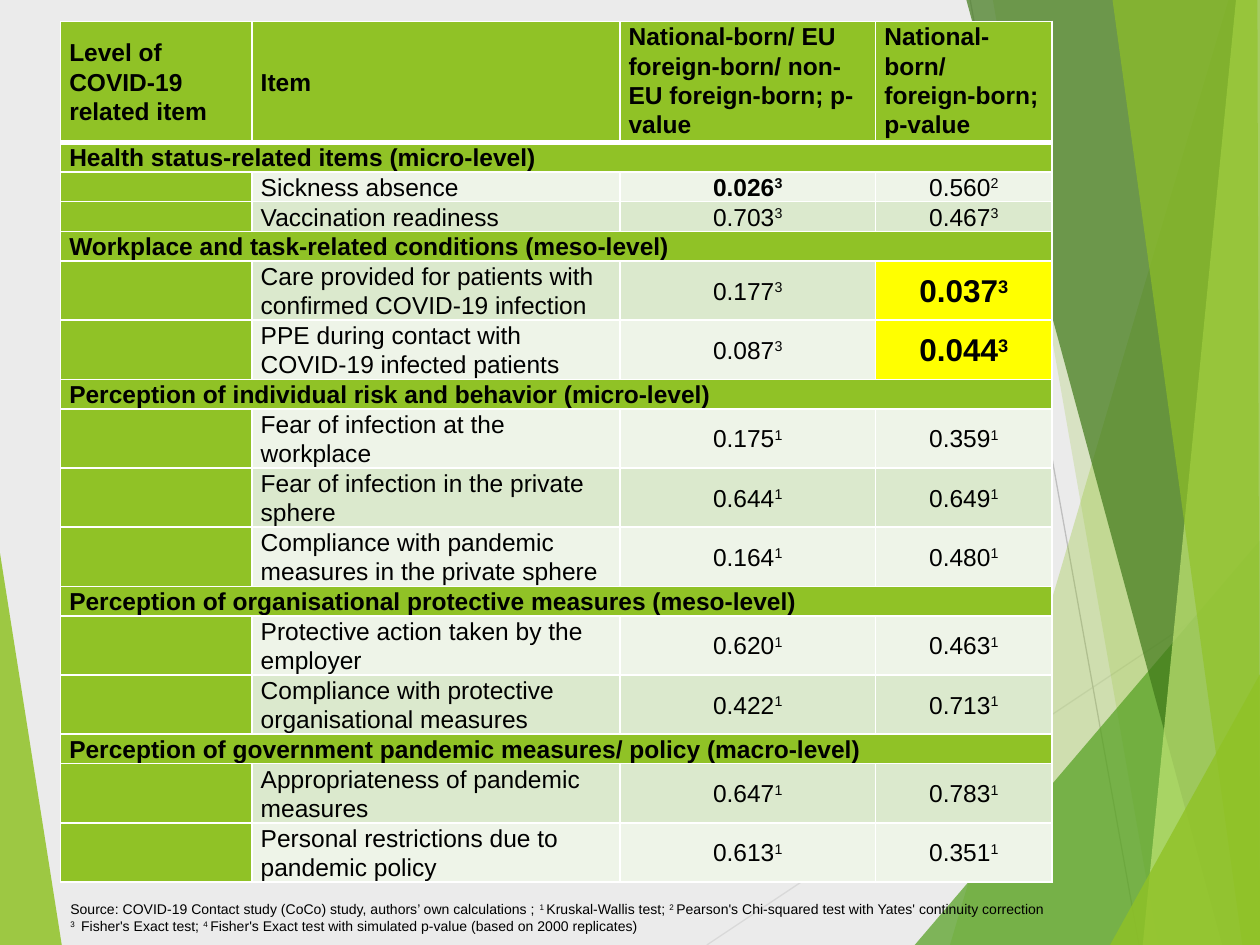
from lxml import etree
from pptx import Presentation
from pptx.dml.color import RGBColor
from pptx.enum.shapes import MSO_CONNECTOR
from pptx.enum.text import MSO_ANCHOR, PP_ALIGN
from pptx.oxml.ns import qn
from pptx.util import Inches, Pt

STRAIGHT = MSO_CONNECTOR.STRAIGHT
TOP, MIDDLE = MSO_ANCHOR.TOP, MSO_ANCHOR.MIDDLE
LEFT, CENTER, JUSTIFY = PP_ALIGN.LEFT, PP_ALIGN.CENTER, PP_ALIGN.JUSTIFY

FONT = "Arial"
GREEN, YELLOW, WHITE, BLACK = "90C226", "FFFF00", "FFFFFF", "000000"
BANDS = ("EEF4E8", "DBE9CD")
COL_WIDTHS = (1.52, 2.92, 2.03, 1.4)
HEADER_H, LINE_H, ITEM_H = 0.96, 0.23, 0.47

# Background facets: points, colour, opacity in percent
LEFT_FACET = ([(0, 4.39), (0.49, 7.5), (0, 7.5)], GREEN, 85)
RIGHT_FACETS = [
    ([(9.75, 0), (7.54, 7.5), (10, 7.5), (10, 0)], GREEN, 30),
    ([(7.88, 0), (9.19, 7.5), (10, 7.5), (10, 0)], GREEN, 20),
    ([(7.26, 7.5), (10, 4.29), (10, 7.5)], "54A021", 72),
    ([(7.67, 0), (9.7, 7.5), (10, 7.5), (10, 0)], "3F7819", 70),
    ([(9.81, 0), (9.07, 7.5), (10, 7.5), (10, 0)], "C0E474", 70),
    ([(8.83, 0), (9.86, 7.5), (10, 7.5), (9.98, 0)], GREEN, 65),
    ([(8.81, 7.5), (10, 5.35), (10, 7.5)], GREEN, 80),
]
RAYS = [((5.61, 7.5), (10, 4.57), "D9D9D9"), ((7.7, 0), (9.04, 7.5), "BFBFBF")]

# Text between ^ marks is superscript; * marks a bold value, ! a highlighted one
HEADERS = [
    ("Level of COVID-19 related item", MIDDLE),
    ("Item", MIDDLE),
    ("National-born/ EU foreign-born/ non-EU foreign-born; p-value", TOP),
    ("National-born/ foreign-born;\np-value", TOP),
]
SECTIONS = [
    ("Health status-related items (micro-level)", LINE_H, [
        ("Sickness absence", "*0.026^3", "0.560^2"),
        ("Vaccination readiness", "0.703^3", "0.467^3")]),
    ("Workplace and task-related conditions (meso-level)", ITEM_H, [
        ("Care provided for patients with confirmed COVID-19 infection",
         "0.177^3", "!0.037^3"),
        ("PPE during contact with COVID-19 infected patients",
         "0.087^3", "!0.044^3")]),
    ("Perception of individual risk and behavior (micro-level)", ITEM_H, [
        ("Fear of infection at the workplace", "0.175^1", "0.359^1"),
        ("Fear of infection in the private sphere", "0.644^1", "0.649^1"),
        ("Compliance with pandemic measures in the private sphere",
         "0.164^1", "0.480^1")]),
    ("Perception of organisational protective measures (meso-level)", ITEM_H, [
        ("Protective action taken by the employer", "0.620^1", "0.463^1"),
        ("Compliance with protective organisational measures",
         "0.422^1", "0.713^1")]),
    ("Perception of government pandemic measures/ policy (macro-level)", ITEM_H, [
        ("Appropriateness of pandemic measures", "0.647^1", "0.783^1"),
        ("Personal restrictions due to pandemic policy", "0.613^1", "0.351^1")]),
]
SOURCE = (
    "Source: COVID-19 Contact study (CoCo) study, authors’ own calculations ; "
    "^1 ^Kruskal-Wallis test; ^2 ^Pearson's Chi-squared test with Yates' "
    "continuity correction\n^3 ^ Fisher's Exact test; ^4 ^Fisher's Exact test "
    "with simulated p-value (based on 2000 replicates)"
)


def rgb(color):
    return RGBColor.from_string(color)


def add_text(tf, text, size=14, bold=False, align=LEFT, spacing=None, gap=None):
    for i, line in enumerate(text.split("\n")):
        p = tf.add_paragraph() if i else tf.paragraphs[0]
        p.alignment = align
        if spacing:
            p.line_spacing = spacing
        if gap:
            p.space_before = p.space_after = Pt(gap)
        for j, part in enumerate(line.split("^")):
            if not part:
                continue
            r = p.add_run()
            r.text = part
            r.font.name, r.font.size, r.font.bold = FONT, Pt(size), bold
            r.font.color.rgb = rgb(BLACK)
            if j % 2:
                r.font._element.set("baseline", "30000")


def add_facet(s, points, color, opacity):
    pts = [(Inches(x), Inches(y)) for x, y in points]
    builder = s.shapes.build_freeform(*pts[0])
    builder.add_line_segments(pts[1:], close=True)
    sp = builder.convert_to_shape()
    sp.shadow.inherit = False
    sp.line.fill.background()
    sp.fill.solid()
    sp.fill.fore_color.rgb = rgb(color)
    clr = sp._element.spPr.find(qn("a:solidFill"))[0]
    etree.SubElement(clr, qn("a:alpha"), val=str(opacity * 1000))


def add_ray(s, start, end, color):
    line = s.shapes.add_connector(STRAIGHT, *map(Inches, start + end))
    line.line.color.rgb = rgb(color)
    line.line.width = Pt(0.75)
    etree.SubElement(line._element.spPr, qn("a:effectLst"))


def set_borders(cell, bottom=1):
    tcPr = cell._tc.get_or_add_tcPr()
    for i, side in enumerate("LRTB"):
        width = bottom if side == "B" else 1
        ln = etree.Element(qn(f"a:ln{side}"), w=str(Pt(width)))
        fill = etree.SubElement(ln, qn("a:solidFill"))
        etree.SubElement(fill, qn("a:srgbClr"), val=WHITE)
        tcPr.insert(i, ln)


def fill_cell(cell, text, color, anchor=MIDDLE, bottom=1, **text_format):
    cell.margin_left = cell.margin_right = Inches(0.07)
    cell.margin_top = cell.margin_bottom = 0
    cell.vertical_anchor = anchor
    cell.fill.solid()
    cell.fill.fore_color.rgb = rgb(color)
    set_borders(cell, bottom)
    if text:
        add_text(cell.text_frame, text, spacing=1.07, **text_format)
    else:
        # Keep empty cells from stretching the short rows
        p = cell.text_frame.paragraphs[0]
        etree.SubElement(p._p, qn("a:endParaRPr"), sz="1400")


def fill_value(cell, value, band):
    highlighted = value.startswith("!")
    fill_cell(cell, value.lstrip("*!"), YELLOW if highlighted else band,
              size=18 if highlighted else 14,
              bold=value[0] in "*!", align=CENTER)


def add_results_table(s):
    heights = [HEADER_H]
    for _, height, items in SECTIONS:
        heights += [LINE_H] + [height] * len(items)
    frame = s.shapes.add_table(
        len(heights), len(COL_WIDTHS), Inches(0.48), Inches(0.17),
        Inches(sum(COL_WIDTHS)), Inches(sum(heights)))
    table = frame.table
    for col, width in zip(table.columns, COL_WIDTHS):
        col.width = Inches(width)
    for row, height in zip(table.rows, heights):
        row.height = Inches(height)

    for c, (text, anchor) in enumerate(HEADERS):
        fill_cell(table.cell(0, c), text, GREEN, anchor, bottom=3, bold=True)

    row = 1
    for title, _, items in SECTIONS:
        # Section heading across all columns
        table.cell(row, 0).merge(table.cell(row, 3))
        first = row == 1
        fill_cell(table.cell(row, 0), title, GREEN, TOP if first else MIDDLE,
                  bold=True, align=JUSTIFY if first else LEFT, gap=4)
        for c in range(1, 4):
            fill_cell(table.cell(row, c), "", GREEN)
        # Items with their p-values
        for r, (item, *values) in enumerate(items, row + 1):
            band = BANDS[r % 2]
            fill_cell(table.cell(r, 0), "", GREEN)
            fill_cell(table.cell(r, 1), item, band)
            for c, value in enumerate(values, 2):
                fill_value(table.cell(r, c), value, band)
        row += 1 + len(items)


def add_source(s):
    box = s.shapes.add_textbox(Inches(0.46), Inches(7.1), Inches(8.58), Inches(0.37))
    box.text_frame.word_wrap = True
    add_text(box.text_frame, SOURCE, size=8)


def main():
    prs = Presentation()
    prs.slide_width, prs.slide_height = Inches(10), Inches(7.5)
    s = prs.slides.add_slide(prs.slide_layouts[6])
    s.background.fill.solid()
    s.background.fill.fore_color.rgb = rgb("EBEBEB")

    # Decorative background
    add_facet(s, *LEFT_FACET)
    for ray in RAYS:
        add_ray(s, *ray)
    for facet in RIGHT_FACETS:
        add_facet(s, *facet)

    # Content
    add_results_table(s)
    add_source(s)
    prs.save("out.pptx")


if __name__ == "__main__":
    main()
